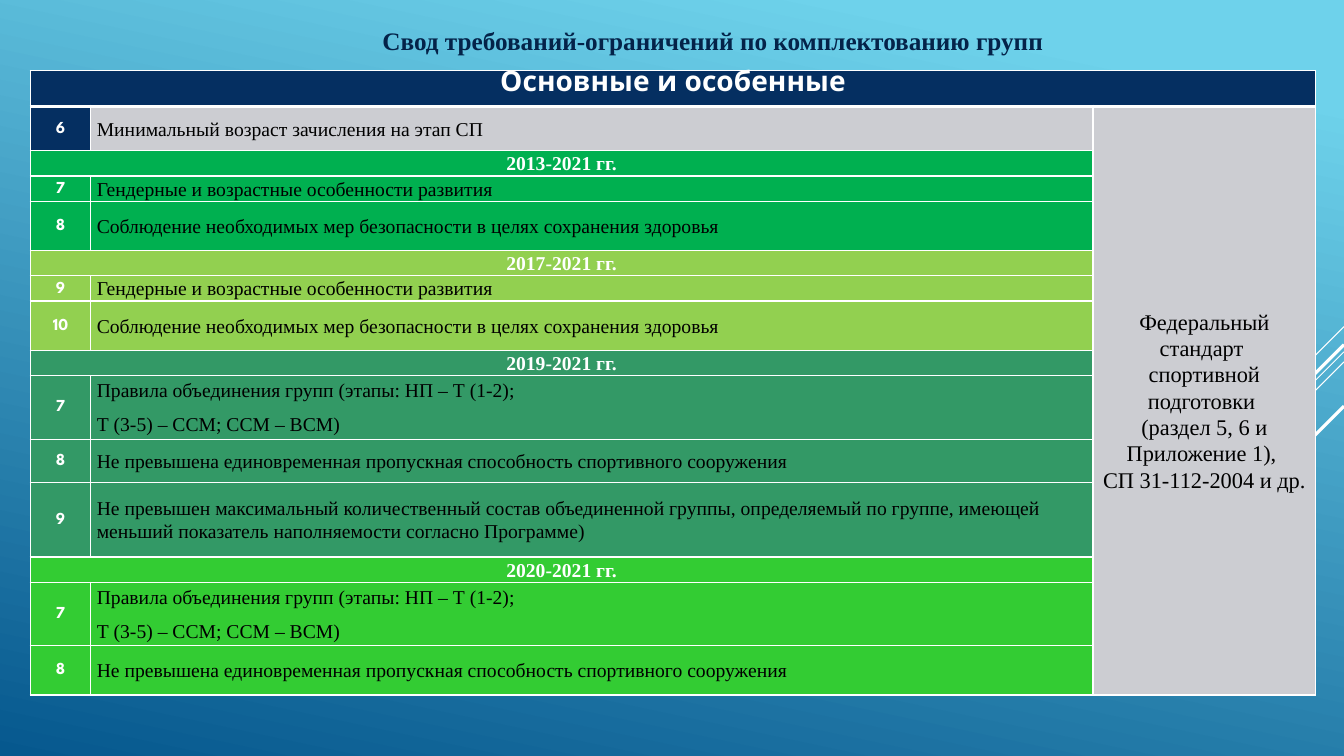
from lxml.etree import SubElement
from pptx import Presentation
from pptx.dml.color import RGBColor
from pptx.enum.shapes import MSO_CONNECTOR as Connector
from pptx.enum.text import MSO_ANCHOR as Anchor, MSO_AUTO_SIZE as AutoSize, PP_ALIGN as Align
from pptx.oxml.ns import qn
from pptx.util import Inches, Pt

WIDTH, HEIGHT = 13.33, 7.5
SERIF, SANS = "Times New Roman", "League Spartan"
COLORS = {
    "sky": "6ED2EB", "deep": "06588E", "title": "042349", "white": "FFFFFF",
    "black": "000000", "navy": "052F61", "gray": "CCCDD2", "green": "00B050",
    "lime": "92D050", "teal": "339966", "bright": "33CC33",
}
COLUMNS = [0.6, 9.94, 2.21]
HEADER_ROW, YEAR_ROW = 0.24, 0.24
HEADER = "Основные и особенные"
STANDARD = ("Федеральный стандарт \nспортивной подготовки \n"
            "(раздел 5, 6 и Приложение 1), \nСП 31-112-2004 и др.")
GENDER = "Гендерные и возрастные особенности развития"
SAFETY = "Соблюдение необходимых мер безопасности в целях сохранения здоровья"
MERGING = "Правила объединения групп (этапы: НП – Т (1-2);\nТ (3-5) – ССМ; ССМ – ВСМ)"
CAPACITY = "Не превышена единовременная пропускная способность спортивного сооружения"
MAXIMUM = ("Не превышен максимальный количественный состав объединенной группы, "
           "определяемый по группе, имеющей меньший показатель наполняемости "
           "согласно Программе)")
SECTIONS = [
    ("2013-2021 гг.", "green", [("7", GENDER, 0.24), ("8", SAFETY, 0.49)]),
    ("2017-2021 гг.", "lime", [("9", GENDER, 0.24), ("10", SAFETY, 0.49)]),
    ("2019-2021 гг.", "teal", [("7", MERGING, 0.63), ("8", CAPACITY, 0.43), ("9", MAXIMUM, 0.74)]),
    ("2020-2021 гг.", "bright", [("7", MERGING, 0.63), ("8", CAPACITY, 0.49)]),
]
RAYS = [(3.24, 1, 0.75), (3.49, 3.26, 0.75), (3.59, 2.07, 0.75), (3.42, 1.91, 2.25), (4.03, 1.39, 2.25)]


def rgb(name):
    return RGBColor.from_string(COLORS[name])


def format_text(frame, size, font, color, bold=False, align=Align.CENTER, spacing=1.07, after=8):
    for para in frame.paragraphs:
        para.alignment = align
        para.line_spacing = spacing
        para.space_after = Pt(after)
        for span in para.runs:
            span.font.size = Pt(size)
            span.font.name = font
            span.font.bold = bold
            span.font.color.rgb = rgb(color)


def paint_background(page):
    fill = page.background.fill
    fill.gradient()
    fill.gradient_angle = 360 - 102
    for stop, position, color in zip(fill.gradient_stops, (0.1, 1), ("sky", "deep")):
        stop.position = position
        stop.color.rgb = rgb(color)


def add_ray(page, top, reach, weight):
    ray = page.shapes.add_connector(
        Connector.STRAIGHT, Inches(WIDTH), Inches(top),
        Inches(WIDTH - reach), Inches(top + reach))
    ray.line.color.rgb = rgb("white")
    ray.line.width = Pt(weight)
    SubElement(ray._element.spPr, qn("a:effectLst"))


def add_title(page, text):
    title = page.shapes.title
    title.left, title.top = Inches(1.53), Inches(0.18)
    title.width, title.height = Inches(11.08), Inches(0.41)
    frame = title.text_frame
    frame.text = text
    frame.word_wrap = True
    frame.auto_size = AutoSize.SHAPE_TO_FIT_TEXT
    frame.vertical_anchor = Anchor.TOP
    format_text(frame, 18, SERIF, "title", bold=True)


def add_borders(cell, top, bottom):
    properties = cell._tc.get_or_add_tcPr()
    for side, weight in (("L", 1), ("R", 1), ("T", top), ("B", bottom)):
        border = SubElement(properties, qn(f"a:ln{side}"), w=str(Pt(weight)))
        paint = SubElement(border, qn("a:solidFill"))
        SubElement(paint, qn("a:srgbClr"), val=COLORS["white"])


def style_cell(cell, color, top=1, bottom=1):
    add_borders(cell, top, bottom)
    cell.fill.solid()
    cell.fill.fore_color.rgb = rgb(color)
    cell.margin_left = cell.margin_right = Inches(0.06)
    cell.margin_top = cell.margin_bottom = 0
    cell.vertical_anchor = Anchor.MIDDLE


def write_cell(cell, text, *style, **options):
    cell.text_frame.text = text
    format_text(cell.text_frame, *style, **options)


def write_item(table, row, number, text):
    write_cell(table.cell(row, 0), number, 12, SANS, "white", bold=True)
    write_cell(table.cell(row, 1), text, 14, SERIF, "black", align=Align.LEFT)


def list_rows():
    rows = [("6", "Минимальный возраст зачисления на этап СП", 0.44, "gray")]
    for years, color, items in SECTIONS:
        rows.append((None, years, YEAR_ROW, color))
        rows.extend((*item, color) for item in items)
    return rows


def add_requirements(page):
    rows = list_rows()
    heights = [HEADER_ROW] + [height for _, _, height, _ in rows]
    table = page.shapes.add_table(
        len(heights), len(COLUMNS), Inches(0.3), Inches(0.7),
        Inches(sum(COLUMNS)), Inches(sum(heights))).table
    table.first_row = table.horz_banding = False
    for column, width in zip(table.columns, COLUMNS):
        column.width = Inches(width)
    for row, height in zip(table.rows, heights):
        row.height = Inches(height)

    for cell in table.rows[0].cells:
        style_cell(cell, "navy", bottom=3)
        cell.vertical_anchor = Anchor.TOP
    table.cell(0, 0).merge(table.cell(0, 2))
    write_cell(table.cell(0, 0), HEADER, 20, SANS, "white", bold=True)

    for index, (number, text, _, color) in enumerate(rows, start=1):
        top = 3 if index == 1 else 1
        fills = ("navy" if index == 1 else color, color, "gray")
        for cell, fill in zip(table.rows[index].cells, fills):
            style_cell(cell, fill, top=top)
        if number:
            write_item(table, index, number, text)
        else:
            table.cell(index, 0).merge(table.cell(index, 1))
            write_cell(table.cell(index, 0), text, 14, SERIF, "white", bold=True)

    table.cell(1, 2).merge(table.cell(len(rows), 2))
    write_cell(table.cell(1, 2), STANDARD, 16, SERIF, "black", spacing=1.06, after=0)


def main():
    deck = Presentation()
    deck.slide_width, deck.slide_height = Inches(WIDTH), Inches(HEIGHT)
    page = deck.slides.add_slide(deck.slide_layouts[5])
    paint_background(page)
    for ray in RAYS:
        add_ray(page, *ray)
    add_title(page, "Свод требований-ограничений по комплектованию групп")
    add_requirements(page)
    deck.save("out.pptx")


if __name__ == "__main__":
    main()
